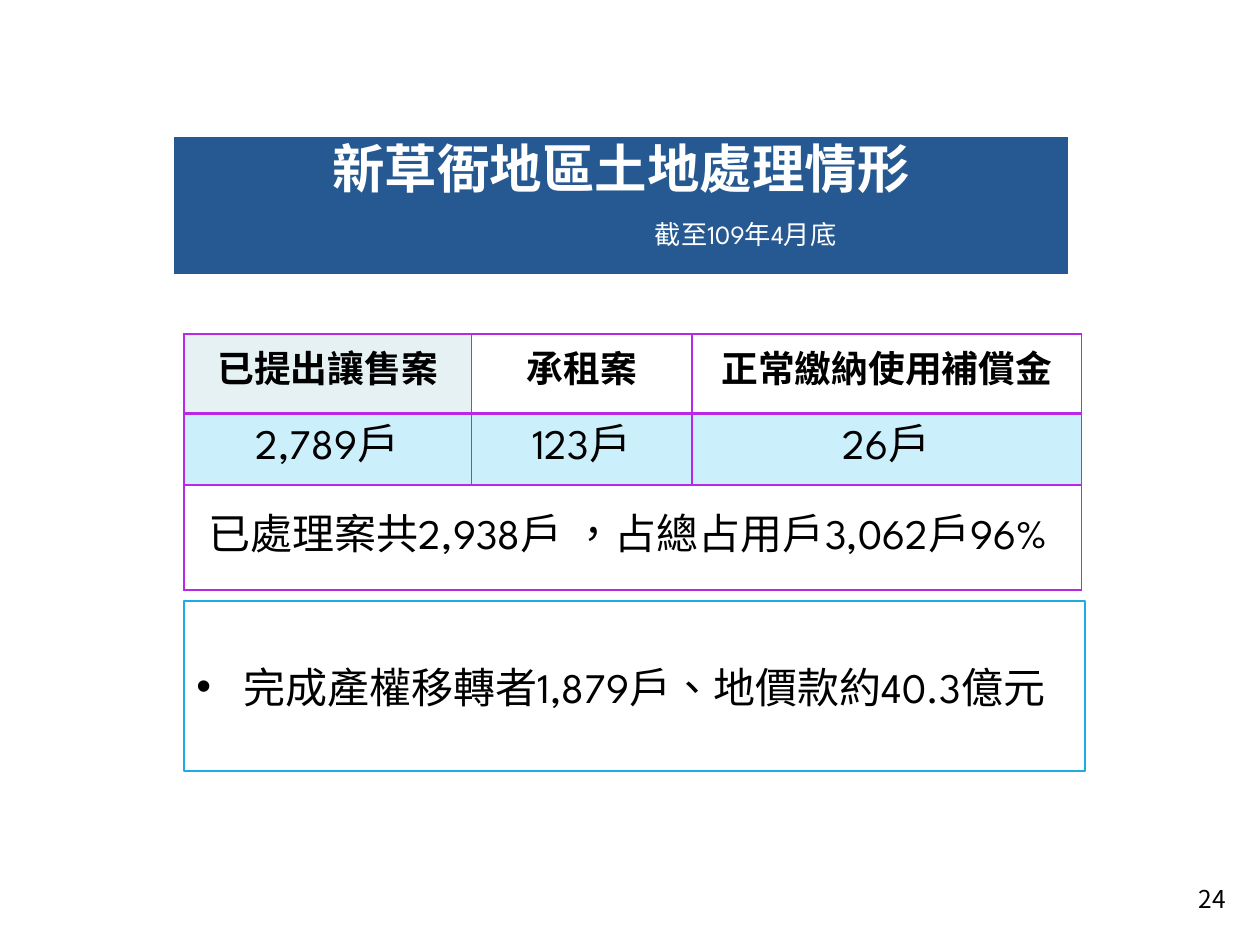
from dataclasses import dataclass

from lxml.etree import SubElement
from pptx import Presentation
from pptx.dml.color import RGBColor
from pptx.enum.lang import MSO_LANGUAGE_ID
from pptx.enum.shapes import MSO_SHAPE
from pptx.enum.text import MSO_ANCHOR, MSO_AUTO_SIZE, PP_ALIGN
from pptx.oxml.ns import qn
from pptx.util import Cm, Pt


@dataclass(frozen=True)
class Theme:
    white: str = "FFFFFF"
    black: str = "000000"
    banner: str = "265991"
    head: str = "E6F1F4"
    count: str = "00B0F0"
    grid: str = "B927E9"
    frame: str = "1CACE3"
    latin: str = "League Spartan"
    cjk: str = "Noto Sans CJK SC"
    title: int = 30
    date: int = 15
    header: int = 21
    body: int = 24
    lead: int = 28
    number: int = 14


T = Theme()


def set_all(obj, **values):
    for name, value in values.items():
        setattr(obj, name, value)


def add_run(p, text, size, font=T.latin, color=T.black, bold=False):
    r = p.add_run()
    r.text = text
    set_all(r.font, name=font, size=Pt(size), bold=bold,
            language_id=MSO_LANGUAGE_ID.TRADITIONAL_CHINESE)
    r.font.color.rgb = RGBColor.from_string(color)
    SubElement(r.font._element, qn("a:ea"), typeface=font)


def set_frame(tf, anchor=MSO_ANCHOR.MIDDLE, x=0.25, y=0.13):
    set_all(tf, word_wrap=True, auto_size=MSO_AUTO_SIZE.NONE, vertical_anchor=anchor,
            margin_left=Cm(x), margin_right=Cm(x), margin_top=Cm(y), margin_bottom=Cm(y))


def set_indent(p, left, first=0):
    pPr = p._p.get_or_add_pPr()
    pPr.set("marL", str(Cm(left)))
    pPr.set("indent", str(Cm(first)))
    return pPr


def paint(sp, fill, line, width):
    sp.fill.solid()
    sp.fill.fore_color.rgb = RGBColor.from_string(fill)
    sp.line.color.rgb = RGBColor.from_string(line)
    sp.line.width = Pt(width)


def fill_cell(cell, color, alpha=None):
    if color is None:
        cell.fill.background()
        return
    cell.fill.solid()
    cell.fill.fore_color.rgb = RGBColor.from_string(color)
    if alpha:
        clr = cell._tc.tcPr.find(".//" + qn("a:srgbClr"))
        SubElement(clr, qn("a:alpha"), val=str(alpha * 1000))


def border_cell(cell, top=1, bottom=1):
    # Borders come before the fill in tcPr
    tcPr = cell._tc.get_or_add_tcPr()
    widths = {"lnL": 1, "lnR": 1, "lnT": top, "lnB": bottom}
    for i, (side, width) in enumerate(widths.items()):
        ln = SubElement(tcPr, qn("a:" + side), w=str(Pt(width)))
        SubElement(SubElement(ln, qn("a:solidFill")), qn("a:srgbClr"), val=T.grid)
        tcPr.insert(i, ln)


def add_title(s):
    sp = s.shapes.title
    set_all(sp, left=Cm(3.48), top=Cm(2.74), width=Cm(18.08), height=Cm(2.82))
    paint(sp, T.banner, T.white, 1.75)
    tf = sp.text_frame
    set_frame(tf, MSO_ANCHOR.TOP, y=0)
    p = tf.paragraphs[0]
    p.alignment = PP_ALIGN.CENTER
    add_run(p, "新草衙地區土地處理情形", T.title, T.cjk, T.white, True)
    p = tf.add_paragraph()
    set_all(p, alignment=PP_ALIGN.LEFT, space_before=Pt(11))
    set_indent(p, 9.47)
    add_run(p, "截至109年4月底", T.date, color=T.white)


def add_case_table(s):
    widths, heights = (5.79, 4.45, 7.85), (1.6, 1.45, 2.11)
    table = s.shapes.add_table(3, 3, Cm(3.71), Cm(6.73),
                               Cm(sum(widths)), Cm(sum(heights))).table
    set_all(table, first_row=False, horz_banding=False)
    for col, width in zip(table.columns, widths):
        col.width = Cm(width)
    for row, height in zip(table.rows, heights):
        row.height = Cm(height)

    # Case kinds and their counts
    cases = (("已提出讓售案", "2,789戶", T.head),
             ("承租案", "123戶", None),
             ("正常繳納使用補償金", "26戶", None))
    for c, (kind, count, fill) in enumerate(cases):
        head, value, total = (table.cell(r, c) for r in range(3))
        fill_cell(head, fill)
        fill_cell(value, T.count, 20)
        fill_cell(total, None)
        border_cell(head, bottom=2)
        border_cell(value, top=2)
        border_cell(total)
        for cell, text, size in ((head, kind, T.header), (value, count, T.body)):
            cell.vertical_anchor = MSO_ANCHOR.MIDDLE
            p = cell.text_frame.paragraphs[0]
            p.alignment = PP_ALIGN.CENTER
            add_run(p, text, size, bold=cell is head)

    # Total across all columns
    total = table.cell(2, 0)
    total.merge(table.cell(2, 2))
    total.vertical_anchor = MSO_ANCHOR.MIDDLE
    p = total.text_frame.paragraphs[0]
    add_run(p, " ", T.lead)
    add_run(p, "已處理案共2,938戶 ，占總占用戶3,062戶96%", T.body)


def add_result_box(s):
    sp = s.shapes.add_shape(MSO_SHAPE.RECTANGLE, Cm(3.71), Cm(12.12), Cm(18.16), Cm(3.43))
    sp.shadow.inherit = False
    paint(sp, T.white, T.frame, 1.25)
    set_frame(sp.text_frame)
    p = sp.text_frame.paragraphs[0]
    set_all(p, alignment=PP_ALIGN.LEFT, space_before=Pt(12), space_after=Pt(12))
    pPr = set_indent(p, 0.95, -0.95)
    SubElement(pPr, qn("a:buFont"), typeface="Arial")
    SubElement(pPr, qn("a:buChar"), char="•")
    add_run(p, "完成產權移轉者1,879戶、地價款約40.3億元", T.body)


def add_page_number(s):
    tf = s.shapes.add_textbox(Cm(23.7), Cm(17.73), Cm(1.19), Cm(0.76)).text_frame
    set_frame(tf, x=0.18, y=0.1)
    p = tf.paragraphs[0]
    p.alignment = PP_ALIGN.RIGHT
    add_run(p, "24", T.number, T.cjk)


def main():
    prs = Presentation()
    set_all(prs, slide_width=Cm(25.4), slide_height=Cm(19.05))
    s = prs.slides.add_slide(prs.slide_layouts[5])
    s.background.fill.solid()
    s.background.fill.fore_color.rgb = RGBColor.from_string(T.white)
    add_title(s)
    add_case_table(s)
    add_result_box(s)
    add_page_number(s)
    prs.save("out.pptx")


if __name__ == "__main__":
    main()
